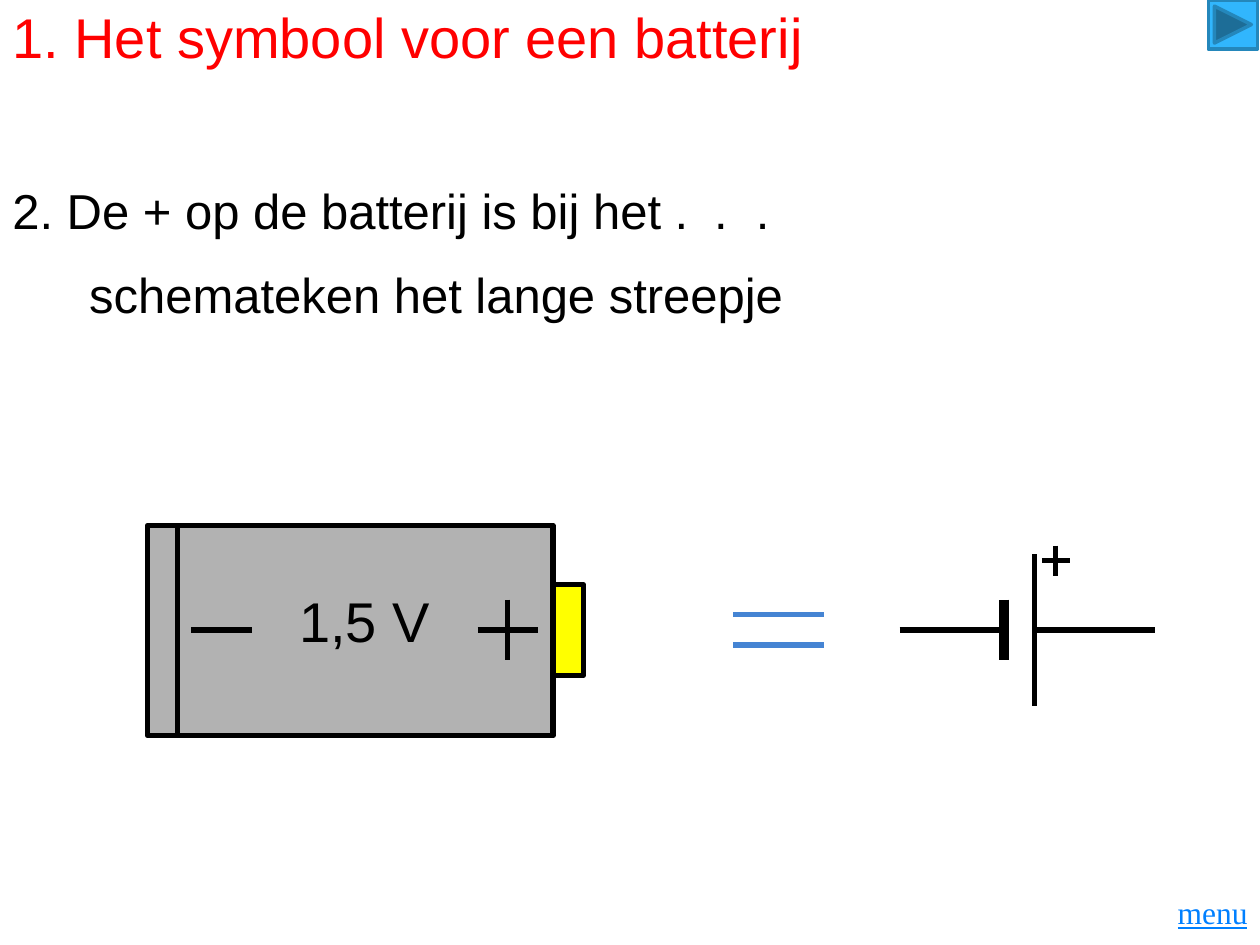
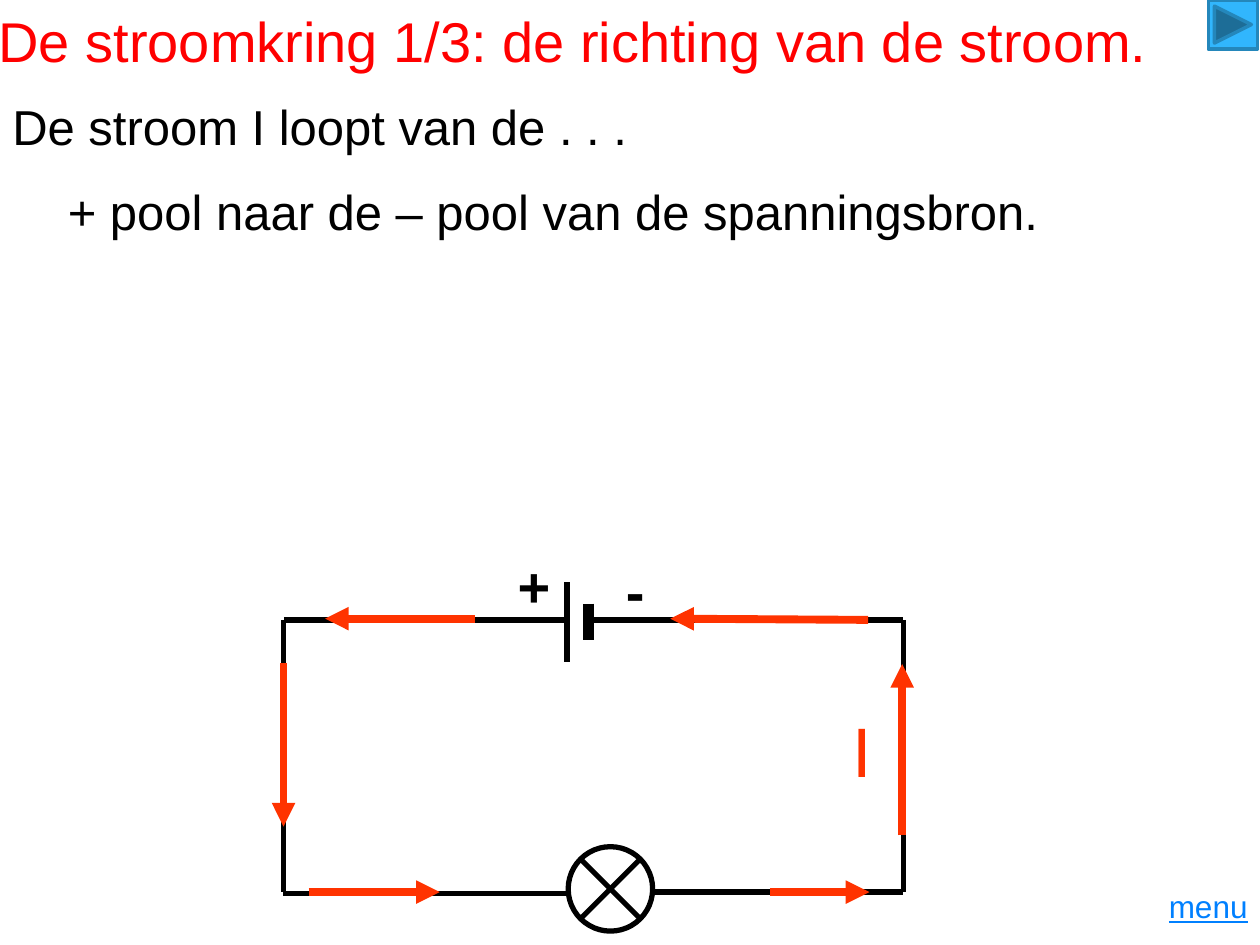
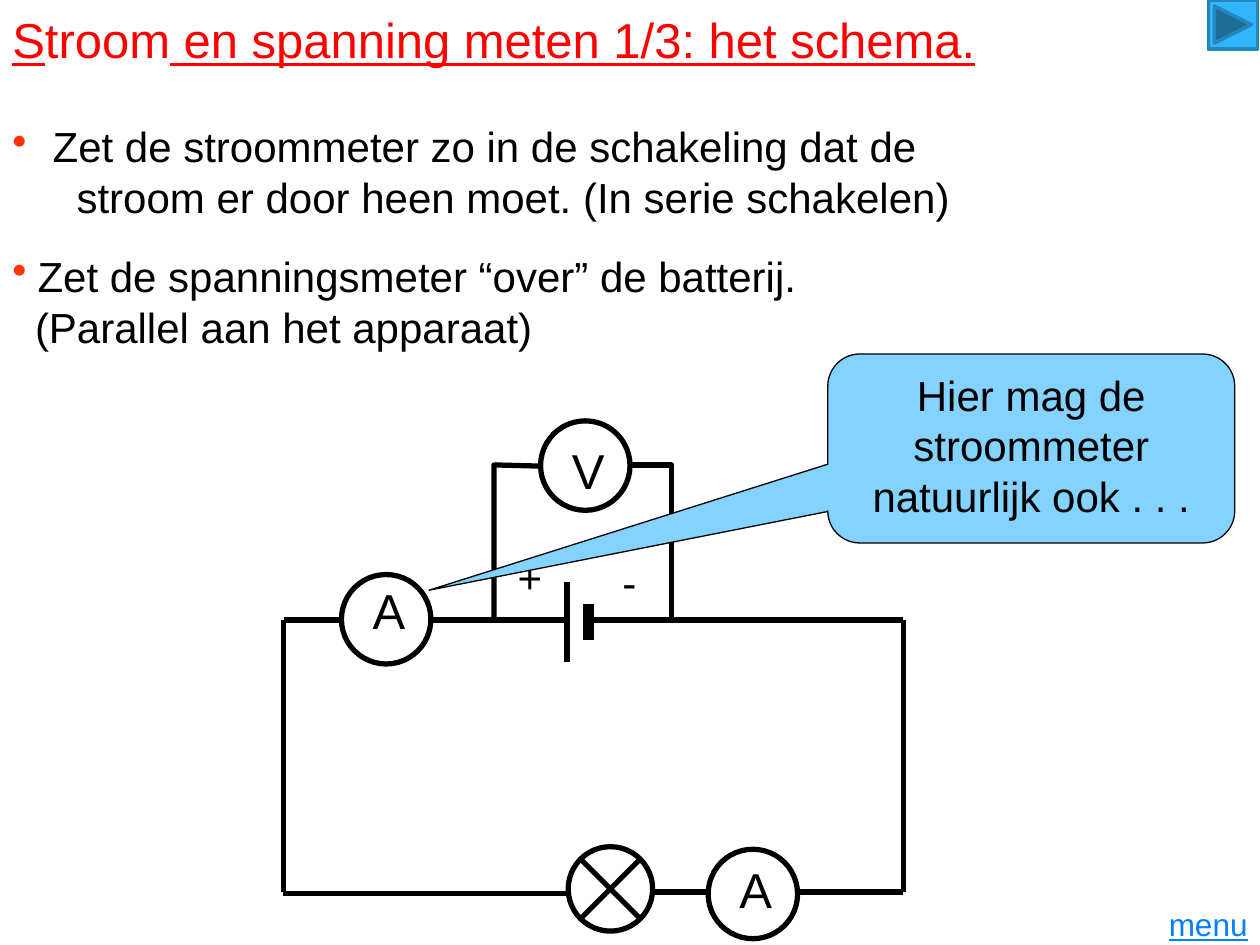
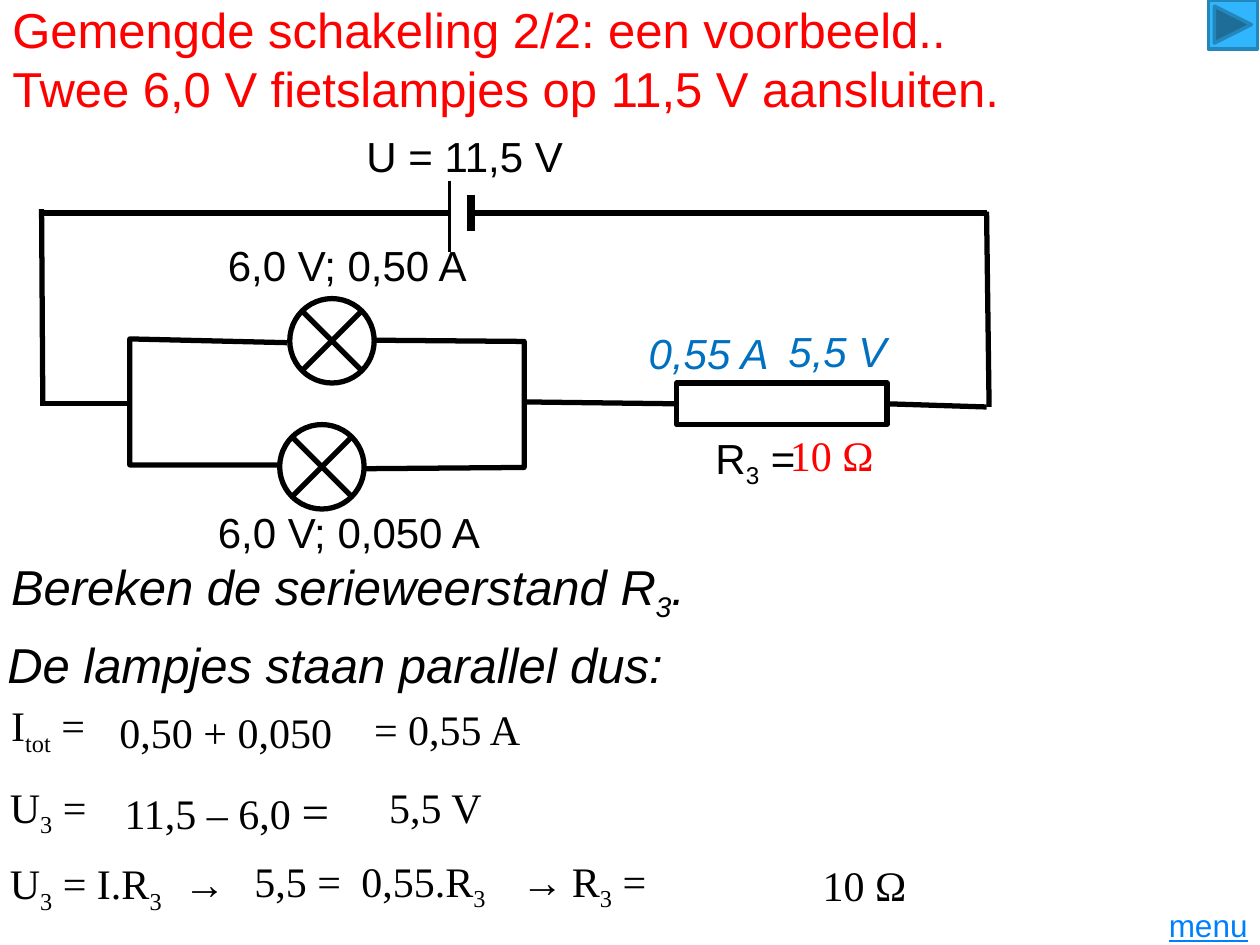
from lxml.etree import SubElement
from pptx import Presentation
from pptx.dml.color import RGBColor
from pptx.enum.shapes import MSO_CONNECTOR, MSO_SHAPE
from pptx.enum.text import MSO_ANCHOR as ANCHOR, PP_ALIGN as ALIGN
from pptx.oxml.ns import qn
from pptx.util import Inches, Pt

BLACK = RGBColor(0x00, 0x00, 0x00)
WHITE = RGBColor(0xFF, 0xFF, 0xFF)
RED = RGBColor(0xFF, 0x00, 0x00)
CURRENT = RGBColor(0xFF, 0x33, 0x00)
GREY = RGBColor(0xB2, 0xB2, 0xB2)
YELLOW = RGBColor(0xFF, 0xFF, 0x00)
EQUALS_BLUE = RGBColor(0x45, 0x84, 0xD3)
ANSWER_BLUE = RGBColor(0x00, 0x70, 0xC0)
MENU_BLUE = RGBColor(0x00, 0x80, 0xFF)
BUTTON_FILL = RGBColor(0x31, 0xB6, 0xFD)
BUTTON_LINE = RGBColor(0x24, 0x87, 0xBB)
CALLOUT_FILL = RGBColor(0x83, 0xD3, 0xFE)
SANS = "Arial"
SERIF = "Times New Roman"


def add_box(slide, text, left, top, width, height, kind=None, fill=None, line=BLACK,
            line_width=3, size=24, font=SANS, color=BLACK, bold=False, italic=False,
            underline=False, marked="subscript", align=ALIGN.LEFT, anchor=ANCHOR.TOP,
            indents=(), tabs=()):
    place = [Inches(value) for value in (left, top, width, height)]
    if kind is None:
        shape = slide.shapes.add_textbox(*place)
    else:
        shape = slide.shapes.add_shape(kind, *place)
        shape.shadow.inherit = False
        shape.line.color.rgb = line
        shape.line.width = Pt(line_width)
        if fill is None:
            shape.fill.background()
        else:
            shape.fill.solid()
            shape.fill.fore_color.rgb = fill
    frame = shape.text_frame
    frame.word_wrap = True
    frame.vertical_anchor = anchor
    for row, content in enumerate(text.split("\n")):
        paragraph = frame.add_paragraph() if row else frame.paragraphs[0]
        paragraph.alignment = align
        properties = paragraph._p.get_or_add_pPr()
        if indents:
            properties.set("marL", str(Inches(indents[row])))
            properties.set("indent", str(0 if row else -Inches(indents[row])))
            if row == 0:
                bullet_color = SubElement(properties, qn("a:buClr"))
                SubElement(bullet_color, qn("a:srgbClr"), val=str(CURRENT))
                SubElement(properties, qn("a:buChar"), char="•")
        if tabs:
            tab_list = SubElement(properties, qn("a:tabLst"))
            for position in tabs:
                SubElement(tab_list, qn("a:tab"), pos=str(Inches(position)), algn="l")
        for index, part in enumerate(content.split("_")):
            if not part:
                continue
            run = paragraph.add_run()
            run.text = part
            run.font.size = Pt(size)
            run.font.name = font
            run.font.color.rgb = color
            run.font.bold = bold
            run.font.italic = italic
            run.font.underline = underline
            if index % 2 and marked == "subscript":
                run.font._element.set("baseline", "-25000")
            elif index % 2 and marked == "underline":
                run.font.underline = True
            elif index % 2 and marked == "large":
                run.font.size = Pt(28)
    return shape


def draw_line(slide, *points, color=BLACK, width=3, arrow=False):
    corners = [(Inches(x), Inches(y)) for x, y in points]
    if len(corners) == 2:
        line = slide.shapes.add_connector(MSO_CONNECTOR.STRAIGHT, *corners[0], *corners[1])
    else:
        builder = slide.shapes.build_freeform(*corners[0])
        builder.add_line_segments(corners[1:], close=False)
        line = builder.convert_to_shape()
        line.fill.background()
    line.line.color.rgb = color
    line.line.width = Pt(width)
    if arrow:
        SubElement(line.line._get_or_add_ln(), qn("a:tailEnd"), type="triangle")
    SubElement(line._element.spPr, qn("a:effectLst"))
    return line


presentation = Presentation()
presentation.slide_width = Inches(10)
presentation.slide_height = Inches(7.5)
blank = presentation.slide_layouts[6]
battery_slide, direction_slide, meter_slide, mixed_slide = [
    presentation.slides.add_slide(blank) for _ in range(4)]

add_box(battery_slide, "1. Het symbool voor een batterij", 0, 0, 10, 0.58,
        size=32, color=RED, anchor=ANCHOR.MIDDLE)
add_box(battery_slide, "2. De + op de batterij is bij het .\t.\t.", 0, 1.42, 10, 0.5,
        size=28, anchor=ANCHOR.MIDDLE, tabs=(5.57, 5.9))
add_box(battery_slide, "schemateken het lange streepje", 0.61, 2, 5.93, 0.67,
        size=28, anchor=ANCHOR.MIDDLE)

add_box(battery_slide, "", 1.17, 4.17, 3.22, 1.67, kind=MSO_SHAPE.RECTANGLE, fill=GREY)
add_box(battery_slide, "", 4.39, 4.64, 0.24, 0.72, kind=MSO_SHAPE.RECTANGLE, fill=YELLOW)
for start, end, width in [
    ((8.38, 4.33), (8.38, 4.57), 3),
    ((8.27, 4.45), (8.49, 4.45), 3),
    ((7.14, 5), (7.97, 5), 3),
    ((7.97, 4.76), (7.97, 5.24), 6),
    ((8.21, 5), (9.17, 5), 3),
    ((8.21, 4.4), (8.21, 5.6), 3),
    ((1.41, 4.17), (1.41, 5.83), 3),
    ((4.03, 4.76), (4.03, 5.24), 3),
    ((3.79, 5), (4.27, 5), 3),
    ((1.52, 5), (2, 5), 3),
]:
    draw_line(battery_slide, start, end, width=width)
for y in (4.88, 5.12):
    draw_line(battery_slide, (5.82, y), (6.54, y), color=EQUALS_BLUE)
add_box(battery_slide, "1,5 V", 2.02, 4.61, 1.75, 0.64, size=32, align=ALIGN.CENTER)

for slide in (direction_slide, meter_slide):
    for start, end, width in [
        ((4.5, 4.92), (2.25, 4.92), 3),
        ((2.25, 4.92), (2.25, 7.08), 3),
        ((4.51, 7.09), (2.25, 7.09), 3),
        ((5.18, 7.08), (7.17, 7.08), 3),
        ((4.67, 4.92), (7.17, 4.92), 3),
        ((7.17, 4.92), (7.17, 7.08), 3),
        ((4.5, 4.62), (4.5, 5.25), 3),
        ((4.67, 4.79), (4.67, 5.08), 6),
    ]:
        draw_line(slide, start, end, width=width)
    add_box(slide, "", 4.51, 6.72, 0.67, 0.67, kind=MSO_SHAPE.FLOWCHART_SUMMING_JUNCTION)

add_box(direction_slide, "+", 4.01, 4.33, 0.49, 0.63, size=32, bold=True)
add_box(direction_slide, "-", 4.87, 4.37, 0.46, 0.63, size=32, bold=True)
add_box(direction_slide, "+ pool naar de – pool van de spanningsbron.", 0.44, 1.39, 9.53, 0.57,
        size=28)
add_box(direction_slide, "De stroom I loopt van de . . .", 0, 0.72, 7.44, 0.57, size=28)
add_box(direction_slide, "De stroomkring 1/3: de richting van de stroom.", -0.11, 0, 10.07, 0.64,
        size=32, color=RED)
for start, end in [
    ((3.77, 4.91), (2.58, 4.91)),
    ((6.89, 4.92), (5.32, 4.91)),
    ((7.16, 6.63), (7.16, 5.27)),
    ((2.45, 7.08), (3.49, 7.08)),
    ((6.11, 7.08), (6.9, 7.08)),
    ((2.25, 5.26), (2.25, 6.56)),
]:
    draw_line(direction_slide, start, end, color=CURRENT, width=4.5, arrow=True)
add_box(direction_slide, "I", 6.67, 5.57, 0.5, 0.77, size=40, color=CURRENT)

add_box(meter_slide, "+", 4.01, 4.33, 0.49, 0.51)
add_box(meter_slide, "-", 4.84, 4.37, 0.49, 0.51)
add_box(meter_slide, "_S_troom_ en spanning meten 1/3: het schema._", 0, 0.03, 10, 0.57,
        size=28, color=RED, marked="underline")
add_box(meter_slide, "Zet de stroommeter zo in de schakeling dat de\n"
        "stroom er door heen moet. (In serie schakelen)", 0, 0.91, 10, 0.91, indents=(0.32, 0.51))
add_box(meter_slide, "Zet de spanningsmeter “over” de batterij.\n(Parallel aan het apparaat)",
        0, 1.94, 10, 0.91, indents=(0.2, 0.18))
draw_line(meter_slide, (4.3, 3.7), (3.92, 3.69), (3.92, 4.92))
draw_line(meter_slide, (4.98, 3.69), (5.33, 3.69), (5.33, 4.92))
for letter, left, top, letter_top in [
    ("A", 5.62, 6.74, 6.77), ("V", 4.29, 3.34, 3.45), ("A", 2.71, 4.56, 4.56),
]:
    add_box(meter_slide, "", left, top, 0.71, 0.71, kind=MSO_SHAPE.OVAL, fill=WHITE)
    add_box(meter_slide, letter, left + 0.15, letter_top, 0.55, 0.57, size=28)
callout = add_box(meter_slide, "Hier mag de stroommeter natuurlijk ook . . .", 6.57, 2.81, 3.23, 1.5,
                  kind=MSO_SHAPE.ROUNDED_RECTANGULAR_CALLOUT, fill=CALLOUT_FILL,
                  line_width=0.75, align=ALIGN.CENTER)
for index, value in enumerate((-1.48, 0.75, 0.17)):
    callout.adjustments[index] = value

add_box(mixed_slide, "Gemengde schakeling 2/2: een voorbeeld..\n"
        "Twee 6,0 V fietslampjes op 11,5 V aansluiten.", 0, 0, 10, 0.92,
        size=28, color=RED, anchor=ANCHOR.MIDDLE)
for text, left, top in [
    ("Bereken de serieweerstand R_3_.", -0.01, 4.4),
    ("De lampjes staan parallel dus:", -0.04, 4.99),
]:
    add_box(mixed_slide, text, left, top, 10, 0.56, size=28, italic=True, anchor=ANCHOR.MIDDLE)
for text, left, top, width in [
    ("R_3_ =", 5.58, 3.38, 1.65),
    ("6,0 V; 0,50 A", 1.71, 1.85, 3.25),
    ("6,0 V; 0,050 A", 1.63, 3.97, 3.25),
    ("U = 11,5 V", 2.81, 0.99, 3.25),
]:
    add_box(mixed_slide, text, left, top, width, 0.51)

draw_line(mixed_slide, (3.57, 1.44), (3.57, 2), width=1.5)
draw_line(mixed_slide, (3.74, 1.55), (3.74, 1.83), width=4.5)
for points in [
    [(1.02, 3.2), (0.32, 3.2)],
    [(2.28, 2.72), (1.03, 2.69), (1.03, 3.69), (2.23, 3.69)],
    [(2.97, 2.7), (4.16, 2.71), (4.16, 3.71), (2.88, 3.72)],
    [(3.58, 1.69), (0.33, 1.69)],
    [(0.33, 1.66), (0.34, 3.22)],
    [(3.75, 1.69), (7.83, 1.69)],
    [(7.83, 1.68), (7.85, 3.23)],
]:
    draw_line(mixed_slide, *points)
resistor = add_box(mixed_slide, "", 5.37, 3.04, 1.67, 0.33, kind=MSO_SHAPE.RECTANGLE)
draw_line(mixed_slide, (5.37, 3.18), (4.16, 3.19)).begin_connect(resistor, 1)
draw_line(mixed_slide, (7.03, 3.23), (7.83, 3.23)).begin_connect(resistor, 3)
for left, top in [(2.3, 2.37), (2.22, 3.37)]:
    add_box(mixed_slide, "", left, top, 0.67, 0.67, kind=MSO_SHAPE.FLOWCHART_SUMMING_JUNCTION)

for text, left, top, width in [
    ("I_tot_ =", -0.01, 5.4, 1.61),
    ("0,50 + 0,050", 0.85, 5.43, 3.07),
    ("= 0,55 A", 2.87, 5.4, 2.28),
    ("U_3_ =", -0.02, 6.05, 1.62),
    ("11,5 – 6,0 _=_", 0.89, 6.05, 2.69),
    ("5,5 V", 2.99, 6.02, 1.94),
]:
    add_box(mixed_slide, text, left, top, width, 0.76, font=SERIF, anchor=ANCHOR.MIDDLE,
            marked="large" if "–" in text else "subscript")
for text, left, top, width in [("0,55 A", 5.05, 2.42, 1.59), ("5,5 V", 6.16, 2.4, 1.5)]:
    add_box(mixed_slide, text, left, top, width, 0.76, color=ANSWER_BLUE, italic=True,
            anchor=ANCHOR.MIDDLE)
for text, left, top, width, color, tabs in [
    ("U_3_ = I.R_3_\t→", -0.02, 6.76, 2.43, BLACK, (1.38,)),
    ("R_3_ =", 4.44, 6.74, 0.86, BLACK, ()),
    ("5,5 =\t0,55.R_3_\t→", 1.92, 6.74, 2.84, BLACK, (0.85, 2.12)),
    ("10 Ω", 6.43, 6.77, 1.84, BLACK, ()),
    ("10 Ω", 6.17, 3.36, 1.84, RED, ()),
]:
    add_box(mixed_slide, text, left, top, width, 0.5, font=SERIF, color=color, tabs=tabs)

for slide, menu_top in zip(presentation.slides, (7.04, 6.99, 7.13, 7.14)):
    add_box(slide, "menu", 8.94, menu_top, 1.06, 0.4, size=18, color=MENU_BLUE, underline=True,
            font=SERIF if slide is battery_slide or menu_top == 7.04 else SANS,
            align=ALIGN.RIGHT, anchor=ANCHOR.MIDDLE)
    add_box(slide, "", 9.59, 0, 0.39, 0.39, kind=MSO_SHAPE.ACTION_BUTTON_FORWARD_OR_NEXT,
            fill=BUTTON_FILL, line=BUTTON_LINE, line_width=2)

presentation.save("out.pptx")
